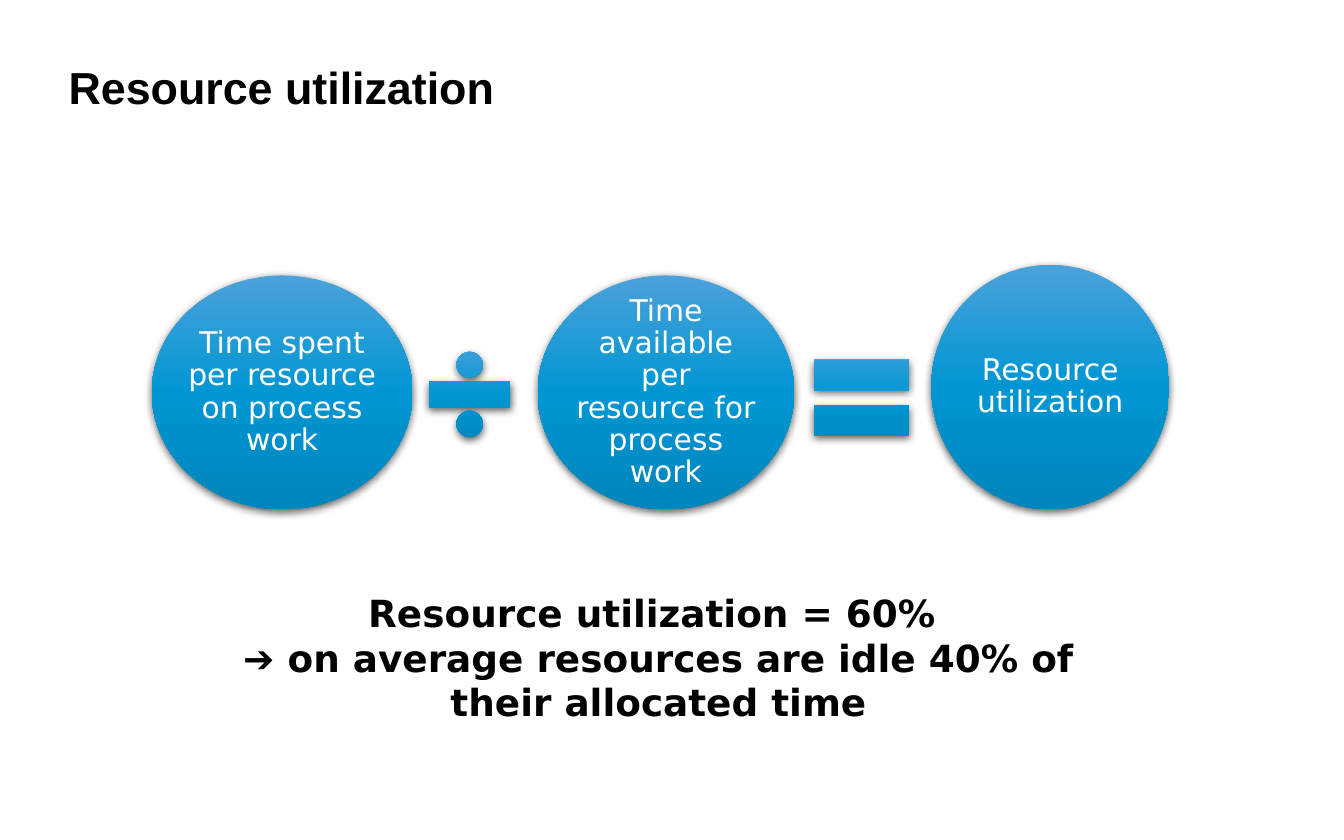
from lxml import etree
from pptx import Presentation
from pptx.dml.color import RGBColor
from pptx.enum.shapes import MSO_SHAPE
from pptx.enum.text import MSO_ANCHOR, PP_ALIGN
from pptx.util import Inches, Pt

OVAL, DIVIDE, EQUAL = MSO_SHAPE.OVAL, MSO_SHAPE.MATH_DIVIDE, MSO_SHAPE.MATH_EQUAL
MIDDLE, CENTER = MSO_ANCHOR.MIDDLE, PP_ALIGN.CENTER
NAMESPACE = "http://schemas.openxmlformats.org/drawingml/2006/main"
GRADIENT = f"""<a:gradFill xmlns:a="{NAMESPACE}" rotWithShape="1"><a:gsLst>
<a:gs pos="0"><a:srgbClr val="4BA2DA"/></a:gs>
<a:gs pos="50000"><a:srgbClr val="0096D3"/></a:gs>
<a:gs pos="100000"><a:srgbClr val="0085BC"/></a:gs>
</a:gsLst><a:lin ang="5400000" scaled="0"/></a:gradFill>"""
SHADOW = f"""<a:effectLst xmlns:a="{NAMESPACE}">
<a:outerShdw blurRad="57150" dist="19050" dir="5400000" algn="ctr" rotWithShape="0">
<a:srgbClr val="000000"><a:alpha val="63000"/></a:srgbClr></a:outerShdw></a:effectLst>"""


def set_font(paragraph, name, size, color, bold=False):
    for run in paragraph.runs:
        run.font.name = name
        run.font.size = Pt(size)
        run.font.bold = bold
        run.font.color.rgb = RGBColor.from_string(color)


def add_glossy_shape(kind, left, top, width, height):
    shape = slide.shapes.add_shape(
        kind, Inches(left), Inches(top), Inches(width), Inches(height))
    shape.line.fill.background()
    outline = shape.line._get_or_add_ln()
    outline.addprevious(etree.fromstring(GRADIENT))
    outline.addnext(etree.fromstring(SHADOW))
    return shape


presentation = Presentation()
presentation.slide_width = Inches(10)
presentation.slide_height = Inches(6.25)
slide = presentation.slides.add_slide(presentation.slide_layouts[6])

# Title
title = slide.shapes.add_textbox(Inches(0.51), Inches(0.15), Inches(7.48), Inches(0.99))
text_frame = title.text_frame
text_frame.word_wrap = True
text_frame.vertical_anchor = MIDDLE
text_frame.margin_left = text_frame.margin_right = 0
text_frame.margin_top = text_frame.margin_bottom = 0
text_frame.text = "Resource utilization"
set_font(text_frame.paragraphs[0], "Arial", 24, "000000", bold=True)

# Terms of the equation, all standing on one base line
BASE = 3.79
terms = [
    ("Time spent per resource on process work", 1.13, 1.94, 1.74),
    ("Time available per resource for process work", 4, 1.91, 1.74),
    ("Resource utilization", 6.93, 1.77, 1.82),
]
for text, left, width, height in terms:
    circle = add_glossy_shape(OVAL, left, BASE - height, width, height)
    text_frame = circle.text_frame
    text_frame.word_wrap = True
    text_frame.vertical_anchor = MIDDLE
    # Slightly wider than the inscribed box, so the lines break as intended
    text_frame.margin_left = text_frame.margin_right = Inches(-0.02)
    text_frame.margin_top = text_frame.margin_bottom = 0
    text_frame.text = text
    paragraph = text_frame.paragraphs[0]
    paragraph.alignment = CENTER
    paragraph.line_spacing = 0.9
    set_font(paragraph, "DejaVu Sans", 16, "FFFFFF")

# Operators
add_glossy_shape(DIVIDE, 3.08, 2.52, 0.83, 0.83)
add_glossy_shape(EQUAL, 5.93, 2.48, 0.96, 0.96)

# Conclusion
conclusion = slide.shapes.add_textbox(
    Inches(1.29), Inches(4.34), Inches(7.22), Inches(1.11))
text_frame = conclusion.text_frame
text_frame.word_wrap = True
text_frame.text = ("Resource utilization = 60% \n"
                   "➔ on average resources are idle 40% of their allocated time")
for paragraph in text_frame.paragraphs:
    paragraph.alignment = CENTER
    set_font(paragraph, "DejaVu Sans", 20, "000000", bold=True)

presentation.save("out.pptx")
